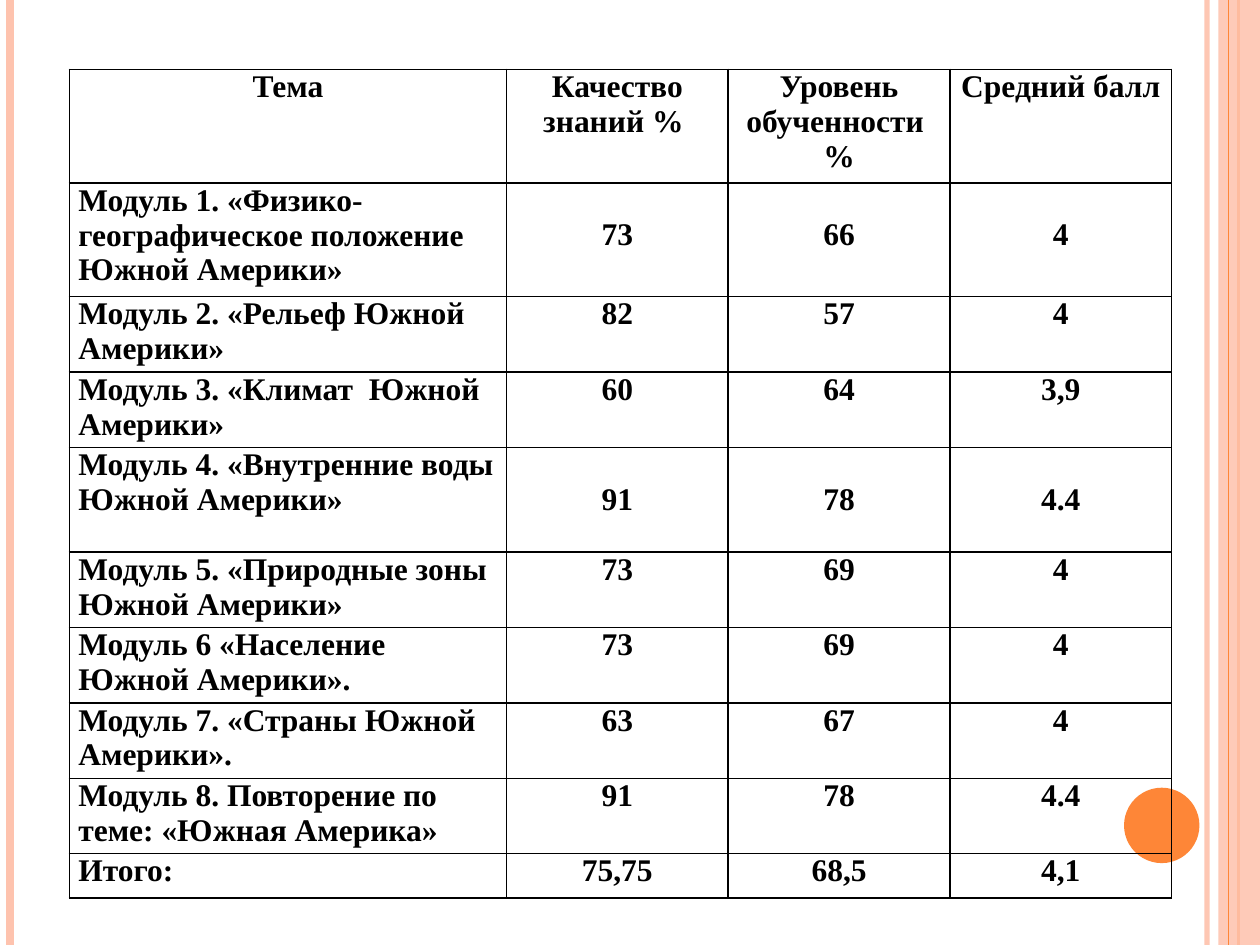
import dataclasses

import lxml.etree
import pptx
import pptx.dml.color
import pptx.enum.shapes
import pptx.enum.text
import pptx.oxml.ns
import pptx.util

Cm = pptx.util.Cm
Pt = pptx.util.Pt
ALIGN = pptx.enum.text.PP_ALIGN
SHAPE = pptx.enum.shapes.MSO_SHAPE
qn = pptx.oxml.ns.qn


@dataclasses.dataclass(frozen=True)
class Theme:
    font: str = "Times New Roman"
    text_size: int = 18
    ink: str = "000000"
    accent: str = "FE8637"
    pale: str = "FEC3AE"
    border: float = 1
    side_inset: float = 0.18
    line_height: float = 0.7


def rgb(color):
    return pptx.dml.color.RGBColor.from_string(color)


def set_opacity(fill_parent, percent):
    color = fill_parent.find(f"{qn('a:solidFill')}/{qn('a:srgbClr')}")
    lxml.etree.SubElement(color, qn("a:alpha"), val=str(percent * 1000))


class SlideBuilder:
    def __init__(self, slide, theme):
        self.slide = slide
        self.theme = theme

    def stripe(self, x, height, color, width, opacity=100):
        stripe = self.slide.shapes.add_connector(
            pptx.enum.shapes.MSO_CONNECTOR.STRAIGHT, Cm(x), Cm(0), Cm(x), Cm(height))
        stripe.line.color.rgb = rgb(color)
        stripe.line.width = Pt(width)
        properties = stripe._element.spPr
        lxml.etree.SubElement(properties, qn("a:effectLst"))
        if opacity < 100:
            set_opacity(properties.find(qn("a:ln")), opacity)

    def shape(self, preset, left, top, width, height, color, opacity=100):
        shape = self.slide.shapes.add_shape(preset, Cm(left), Cm(top), Cm(width), Cm(height))
        shape.shadow.inherit = False
        shape.fill.solid()
        shape.fill.fore_color.rgb = rgb(color)
        shape.line.fill.background()
        if opacity < 100:
            set_opacity(shape._element.spPr, opacity)

    def cell(self, cell, text, alignment, lines_above):
        cell.margin_left = cell.margin_right = Cm(self.theme.side_inset)
        cell.margin_top = Cm(lines_above * self.theme.line_height)
        cell.margin_bottom = Cm(0)
        paragraph = cell.text_frame.paragraphs[0]
        paragraph.alignment = alignment
        run = paragraph.add_run()
        run.text = text
        run.font.name = self.theme.font
        run.font.size = Pt(self.theme.text_size)
        run.font.bold = True
        run.font.color.rgb = rgb(self.theme.ink)
        properties = cell._tc.get_or_add_tcPr()
        for side in ("a:lnL", "a:lnR", "a:lnT", "a:lnB"):
            border = lxml.etree.SubElement(properties, qn(side), w=str(Pt(self.theme.border)))
            fill = lxml.etree.SubElement(border, qn("a:solidFill"))
            lxml.etree.SubElement(fill, qn("a:srgbClr"), val=self.theme.ink)
        cell.fill.background()

    def table(self, left, top, widths, heights, rows, lowered_rows):
        table = self.slide.shapes.add_table(
            len(rows), len(widths), Cm(left), Cm(top), Cm(sum(widths)), Cm(sum(heights))).table
        table.first_row = table.horz_banding = False
        for column, width in zip(table.columns, widths):
            column.width = Cm(width)
        for row, height in zip(table.rows, heights):
            row.height = Cm(height)
        for r, values in enumerate(rows):
            for c, text in enumerate(values):
                centred = r == 0 or c > 0
                lines_above = 1 if r in lowered_rows and c > 0 else 0
                self.cell(table.cell(r, c), text,
                          ALIGN.CENTER if centred else ALIGN.LEFT, lines_above)


RESULTS = [
    ("Тема", "Качество знаний % ", "Уровень обученности  %", "Средний балл"),
    ("Модуль 1. «Физико-географическое положение Южной Америки»", "73", "66", "4"),
    ("Модуль 2. «Рельеф Южной Америки»", "82", "57", "4"),
    ("Модуль 3. «Климат  Южной Америки»", "60", "64", "3,9"),
    ("Модуль 4. «Внутренние воды Южной Америки»", "91", "78", "4.4"),
    ("Модуль 5. «Природные зоны Южной Америки»", "73", "69", "4"),
    ("Модуль 6 «Население Южной Америки».", "73", "69", "4"),
    ("Модуль 7. «Страны Южной Америки».", "63", "67", "4"),
    ("Модуль 8. Повторение по теме: «Южная Америка»", "91", "78", "4.4"),
    ("Итого:", "75,75", "68,5", "4,1"),
]


def main():
    width, height = 25.4, 19.05
    presentation = pptx.Presentation()
    presentation.slide_width, presentation.slide_height = Cm(width), Cm(height)
    theme = Theme()
    builder = SlideBuilder(
        presentation.slides.add_slide(presentation.slide_layouts[6]), theme)

    builder.stripe(24.33, height, theme.pale, 3, opacity=93)
    builder.stripe(0.2, height, theme.pale, 4.5)
    builder.stripe(24.97, height, theme.accent, 1.5)
    builder.shape(SHAPE.RECTANGLE, 24.56, 0, 0.84, height, theme.pale, opacity=87)
    builder.stripe(24.76, height, theme.accent, 0.75)
    builder.shape(SHAPE.OVAL, 22.66, 15.88, 1.52, 1.52, theme.accent)

    two_lines, three_lines = 1.52, 2.29
    row_heights = [three_lines] * 2 + [two_lines] * 2 + [2.11] + [two_lines] * 4 + [0.89]
    builder.table(1.4, 1.4, [8.81] + [4.47] * 3, row_heights, RESULTS, lowered_rows={1, 4})

    presentation.save("out.pptx")


if __name__ == "__main__":
    main()
